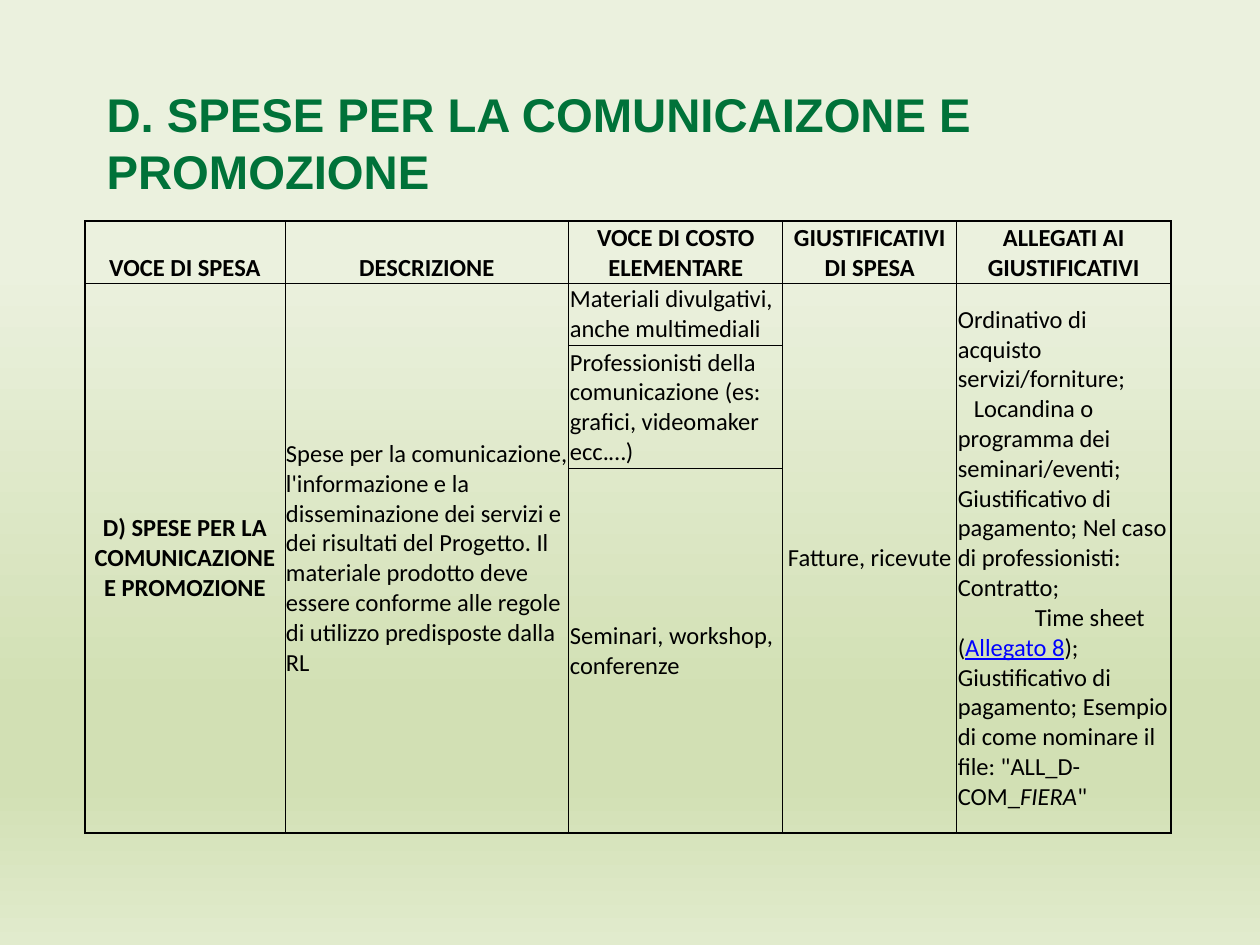
import copy

import pptx
import pptx.dml.color
import pptx.enum.text
import pptx.oxml
import pptx.oxml.ns
import pptx.util

PX = 914400 // 126
COLORS = {"title": "007239", "text": "000000", "link": "0000FF", "border": "000000"}
BACKGROUND_STOPS = [(28, "EBF1DE"), (74, "D2E0B4"), (83, "D2E0B4"), (100, "E1EBCD")]

COLUMN_WIDTHS = [200, 284, 214, 174, 214]
ROW_HEIGHTS = [62, 62, 124, 364]
HEADERS = ["VOCE DI SPESA", "DESCRIZIONE", "VOCE DI COSTO ELEMENTARE",
           "GIUSTIFICATIVI DI SPESA", "ALLEGATI AI GIUSTIFICATIVI"]
EXPENSE = "D) SPESE PER LA COMUNICAZIONE E PROMOZIONE"
DESCRIPTION = ("Spese per la comunicazione, l'informazione e la disseminazione dei servizi "
               "e dei risultati del Progetto. Il materiale prodotto deve essere conforme "
               "alle regole di utilizzo predisposte dalla RL")
COST_ITEMS = ["Materiali divulgativi, anche multimediali",
              "Professionisti della comunicazione (es: grafici, videomaker ecc.…)",
              "Seminari, workshop, conferenze"]
RECEIPTS = "Fatture, ricevute"
# Each paragraph: first-line indent in px, then (text, style) runs
ATTACHMENTS = [
    (0, [("Ordinativo di acquisto servizi/forniture;", "")]),
    (16, [("Locandina o programma dei seminari/eventi;", "")]),
    (0, [("Giustificativo di pagamento; Nel caso di professionisti: Contratto;", "")]),
    (77, [("Time sheet (", ""), ("Allegato 8", "link"),
          ("); Giustificativo di pagamento; Esempio di come nominare il file: \"ALL_D-COM_", ""),
          ("FIERA", "italic"), ("\"", "")]),
]

ANCHOR = pptx.enum.text.MSO_ANCHOR
ALIGN = pptx.enum.text.PP_ALIGN


def rgb(name):
    return pptx.dml.color.RGBColor.from_string(COLORS[name])


def px(length):
    return pptx.util.Emu(length * PX)


def style_font(font, name, size, color, bold=False):
    font.name, font.size, font.bold = name, pptx.util.Pt(size), bold
    font.color.rgb = rgb(color)


def paint_background(slide):
    fill = slide.background.fill
    fill.gradient()
    fill.gradient_angle = 270
    stop_list = slide.element.find(".//" + pptx.oxml.ns.qn("a:gsLst"))
    stop_list.extend([copy.deepcopy(stop) for stop in stop_list])
    for stop, (percent, color) in zip(fill.gradient_stops, BACKGROUND_STOPS):
        stop.position = percent / 100
        stop.color.rgb = pptx.dml.color.RGBColor.from_string(color)


def place_title(slide, left, top, width, height):
    title = slide.shapes.title
    title.left, title.top, title.width, title.height = map(px, (left, top, width, height))
    frame = title.text_frame
    frame.text = "D. SPESE PER LA COMUNICAIZONE E PROMOZIONE"
    frame.auto_size = pptx.enum.text.MSO_AUTO_SIZE.NONE
    frame.vertical_anchor = ANCHOR.MIDDLE
    frame.paragraphs[0].alignment = ALIGN.LEFT
    style_font(frame.paragraphs[0].runs[0].font, "Arial", 27, "title", True)


def set_borders(cell, widths):
    """Draw the sides named in widths, keyed L, R, T, B, in points."""
    properties = cell._tc.get_or_add_tcPr()
    for side, points in widths.items():
        properties.append(pptx.oxml.parse_xml(
            f'<a:ln{side} {pptx.oxml.ns.nsdecls("a")} w="{int(points * 12700)}">'
            f'<a:solidFill><a:srgbClr val="{COLORS["border"]}"/></a:solidFill></a:ln{side}>'))


def border_grid(table):
    """Thick outer frame, thin inner lines, none inside merged cells."""
    last_row, last_column = len(ROW_HEIGHTS) - 1, len(COLUMN_WIDTHS) - 1
    for row in range(last_row + 1):
        for column in range(last_column + 1):
            cell = table.cell(row, column)
            bottom_row = row + (cell.span_height - 1 if cell.is_merge_origin else 0)
            widths = {"L": 1 if column == 0 else 0.5,
                      "R": 1 if column == last_column else 0.5}
            if not cell.is_spanned:
                widths["T"] = 1 if row == 0 else 0.5
            if not cell.is_spanned or row == last_row:
                widths["B"] = 1 if bottom_row == last_row else 0.5
            set_borders(cell, widths)
            cell.fill.background()


def fill_cell(cell, paragraphs, align=ALIGN.LEFT, bold=False, anchor=ANCHOR.MIDDLE):
    cell.margin_left = cell.margin_right = cell.margin_top = px(1)
    cell.margin_bottom = 0
    cell.vertical_anchor = anchor
    if isinstance(paragraphs, str):
        paragraphs = [(0, [(paragraphs, "")])]
    frame = cell.text_frame
    for index, (indent, runs) in enumerate(paragraphs):
        paragraph = frame.add_paragraph() if index else frame.paragraphs[0]
        paragraph.alignment = align
        if indent:
            paragraph._p.get_or_add_pPr().set("indent", str(px(indent)))
        for text, style in runs:
            run = paragraph.add_run()
            run.text = text
            style_font(run.font, "Calibri", 14, "link" if style == "link" else "text", bold)
            run.font.underline = style == "link"
            run.font.italic = style == "italic"


def place_expense_table(slide, left, top):
    table = slide.shapes.add_table(
        len(ROW_HEIGHTS), len(COLUMN_WIDTHS), px(left), px(top),
        px(sum(COLUMN_WIDTHS)), px(sum(ROW_HEIGHTS))).table
    table.first_row = table.horz_banding = False
    for column, width in zip(table.columns, COLUMN_WIDTHS):
        column.width = px(width)
    for row, height in zip(table.rows, ROW_HEIGHTS):
        row.height = px(height)
    for column in (0, 1, 3, 4):
        table.cell(1, column).merge(table.cell(3, column))
    border_grid(table)

    for column, header in enumerate(HEADERS):
        fill_cell(table.cell(0, column), header, ALIGN.CENTER, True, ANCHOR.BOTTOM)
    fill_cell(table.cell(1, 0), EXPENSE, ALIGN.CENTER, True)
    fill_cell(table.cell(1, 1), DESCRIPTION)
    for row, item in enumerate(COST_ITEMS, start=1):
        fill_cell(table.cell(row, 2), item)
    fill_cell(table.cell(1, 3), RECEIPTS, ALIGN.CENTER)
    fill_cell(table.cell(1, 4), ATTACHMENTS)


def main():
    presentation = pptx.Presentation()
    presentation.slide_width, presentation.slide_height = px(1260), px(945)
    slide = presentation.slides.add_slide(presentation.slide_layouts.get_by_name("Title Only"))
    paint_background(slide)
    place_title(slide, 94, 91, 1071, 103)
    place_expense_table(slide, 85, 221)
    presentation.save("out.pptx")


if __name__ == "__main__":
    main()
